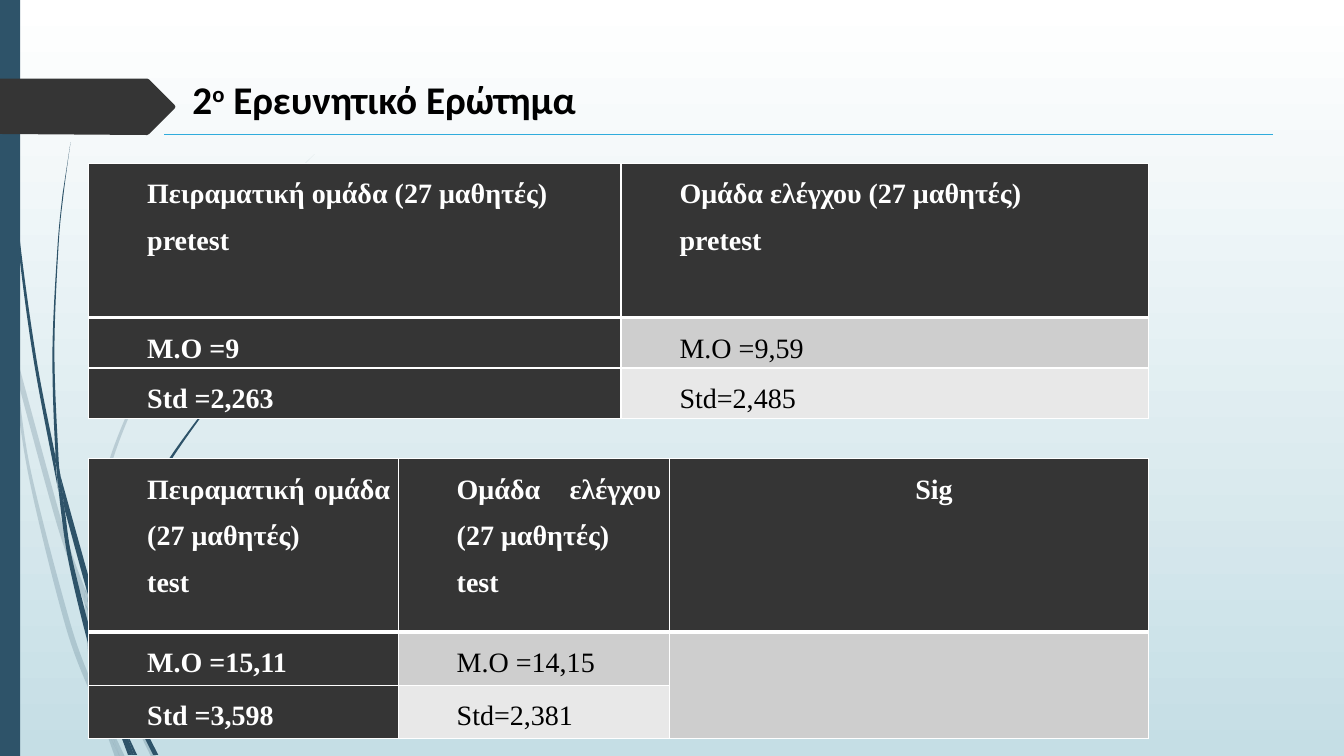
from lxml import etree
from pptx import Presentation
from pptx.dml import color
from pptx.enum import shapes, text
from pptx.oxml import ns
from pptx.util import Inches, Pt

COLORS = {"navy": "2E5369", "dark": "353535", "mid": "CECECE", "pale": "E8E8E8",
          "white": "FFFFFF", "black": "000000", "sky": "C5DEE5", "rule": "2FACDC"}
FAINT_WISPS = [
    ([(0.11, 3.5), (0.08, 3.22), (0, 2.82)], [(0, 2.99), (0.1, 3.44), (0.11, 3.5)]),
    ([(0.14, 3.45), (0.62, 5.2), (0.85, 5.86)],
     [(0.84, 5.99), (0.57, 5.22), (0.17, 3.76)]),
    ([(0.88, 5.96), (0.92, 6.07), (1.27, 6.92), (1.55, 7.51)],
     [(1.5, 7.51), (1.23, 6.94), (0.88, 6.1)]),
    ([(1.05, 7.11), (1.24, 7.51)], [(1.19, 7.51), (1.05, 7.11)]),
    ([(0.11, 3.5), (0.17, 3.76), (0.31, 4.69), (0.7, 6.19), (0.93, 6.83),
      (0.99, 7.07), (1.01, 7.14)],
     [(0.92, 6.93), (0.65, 6.21), (0.28, 4.7), (0.11, 3.5)]),
    ([(0.84, 5.99), (0.88, 6.08), (0.91, 6.46), (1.04, 7.06), (1.05, 7.11)],
     [(0.96, 6.92), (0.93, 6.83), (0.87, 6.46), (0.84, 5.99)]),
    ([(0.88, 5.96), (0.88, 5.84), (1.1, 4.62), (1.6, 3.49), (2.29, 2.45),
      (2.68, 1.98), (2.9, 1.75), (3.12, 1.53)],
     [(2.89, 1.75), (2.68, 1.97), (2.28, 2.44), (1.58, 3.48), (1.07, 4.61),
      (0.85, 5.84), (0.85, 5.86)]),
    ([(1.01, 7.14), (1.14, 7.51)], [(1.19, 7.51), (1.01, 7.14)]),
    ([(0.85, 5.86), (0.88, 5.96), (0.88, 6.1)], [(0.88, 6.08), (0.84, 5.99)]),
    ([(0.93, 6.83), (0.96, 6.92), (1.05, 7.11), (1.19, 7.51)],
     [(1.01, 7.14), (0.99, 7.07), (0.93, 6.83)]),
]
DARK_WISPS = [
    ([(0.03, 0), (0.03, 0.48), (0.07, 1.1), (0.17, 2.33), (0.33, 3.55),
      (0.56, 4.77), (0.57, 4.81)],
     [(0.55, 4.57), (0.55, 4.53), (0.36, 3.55), (0.19, 2.32), (0.08, 1.09),
      (0.05, 0.48), (0.03, 0)]),
    ([(0.6, 4.72), (0.93, 5.9), (1.06, 6.31), (1.06, 6.45)],
     [(1.06, 6.45), (0.88, 5.92), (0.64, 5.05)]),
    ([(1.1, 6.41), (1.13, 6.49), (1.36, 7.06), (1.57, 7.49)],
     [(1.52, 7.49), (1.32, 7.08), (1.11, 6.56)]),
    ([(0.57, 4.77), (0.64, 5.05), (0.72, 5.56), (0.98, 6.57), (1.1, 6.91),
      (1.16, 7.17), (1.17, 7.22)],
     [(1.11, 7.08), (0.93, 6.59), (0.68, 5.57), (0.57, 4.77)]),
    ([(0.6, 4.72), (0.58, 4.53), (0.54, 3.49), (0.58, 2.45), (0.63, 1.93), (0.7, 1.41)],
     [(0.62, 1.93), (0.57, 2.45), (0.52, 3.49), (0.55, 4.49), (0.6, 4.72)]),
    ([(1.22, 7.19), (1.36, 7.49)], [(1.33, 7.49), (1.22, 7.19)]),
    ([(0.55, 4.49), (0.6, 4.72), (0.64, 5.05)], [(0.57, 4.77), (0.55, 4.53)]),
    ([(1.1, 6.41), (1.11, 6.33), (1.25, 5.52), (1.58, 4.76), (2.05, 4.06),
      (2.31, 3.74), (2.61, 3.44)],
     [(2.6, 3.44), (2.31, 3.73), (2.04, 4.05), (1.56, 4.74), (1.22, 5.51), (1.06, 6.31)]),
    ([(1.17, 7.22), (1.27, 7.49)], [(1.31, 7.49), (1.17, 7.22)]),
    ([(1.06, 6.45), (1.11, 6.56), (1.2, 7.16), (1.22, 7.19)],
     [(1.16, 7.06), (1.1, 6.92), (1.06, 6.45)]),
    ([(1.06, 6.31), (1.1, 6.41), (1.11, 6.56)], [(1.06, 6.45), (1.06, 6.31)]),
    ([(1.1, 6.91), (1.16, 7.06), (1.22, 7.19), (1.33, 7.49)],
     [(1.31, 7.49), (1.17, 7.22), (1.1, 6.91)]),
]
ARROW = [(-0.01, 0.78), (1.46, 0.78), (1.48, 0.79), (1.73, 1.04), (1.74, 1.06),
         (1.73, 1.08), (1.48, 1.33), (1.46, 1.34), (-0.01, 1.33)]
TREATED, CONTROL = "Πειραματική ομάδα (27 μαθητές)", "Ομάδα ελέγχου (27 μαθητές)"
PRETEST = [[[TREATED, "pretest"], [CONTROL, "pretest"]],
           [["Μ.Ο =9"], ["Μ.Ο =9,59"]],
           [["Std =2,263"], ["Std=2,485"]]]
TEST = [[[TREATED, "test"], [CONTROL, "test"], ["Sig"]],
        [["Μ.Ο =15,11"], ["Μ.Ο =14,15"], []],
        [["Std =3,598"], ["Std=2,381"], []]]


def rgb(name):
    return color.RGBColor.from_string(COLORS[name])


def apply(target, values):
    for name, value in values.items():
        setattr(target, name, value)


def add_span(para, words, size, font, tone, bold):
    span = para.add_run()
    span.text = words
    apply(span.font, {"size": Pt(size), "name": font, "bold": bold})
    span.font.color.rgb = rgb(tone)
    return span


def paint(shape, tone, opacity=100):
    shape.shadow.inherit = False
    shape.fill.solid()
    shape.fill.fore_color.rgb = rgb(tone)
    shape.line.fill.background()
    if opacity < 100:
        tint = shape.fill._xPr.find(".//" + ns.qn("a:srgbClr"))
        etree.SubElement(tint, ns.qn("a:alpha"), val=str(opacity * 1000))


def add_outline(page, points, tone, opacity=100):
    corners = [(Inches(x), Inches(y)) for x, y in points]
    builder = page.shapes.build_freeform(*corners[0], scale=1.0)
    builder.add_line_segments(corners[1:], close=True)
    shape = builder.convert_to_shape()
    paint(shape, tone, opacity)
    return shape


def bend(segments):
    """Turn a run of straight segments into one flowing curve."""
    ends = [segment[0] for segment in segments]
    points = [(int(end.get("x")), int(end.get("y"))) for end in ends]
    padded = [points[0], *points, points[-1]]
    for segment, a, b, c, d in zip(segments[1:], padded, padded[1:], padded[2:], padded[3:]):
        segment.tag = ns.qn("a:cubicBezTo")
        leave = [q + (r - p) // 6 for p, q, r in zip(a, b, c)]
        arrive = [q - (r - p) // 6 for p, q, r in zip(b, c, d)]
        for place, (x, y) in enumerate((leave, arrive)):
            segment.insert(place, etree.Element(ns.qn("a:pt"), x=str(x), y=str(y)))


def add_wisp(page, outward, back, opacity):
    shape = add_outline(page, outward + back, "navy", opacity)
    start = shape._element.find(".//" + ns.qn("a:moveTo"))
    segments = [start, *shape._element.iter(ns.qn("a:lnTo"))]
    half = len(outward)
    bend(segments[half:half + len(back)])
    bend(segments[:half])


def add_title(page):
    box = page.shapes.add_textbox(Inches(1.81), Inches(0.7), Inches(7.65), Inches(0.57))
    apply(box.text_frame, {"word_wrap": True,
                           "auto_size": text.MSO_AUTO_SIZE.SHAPE_TO_FIT_TEXT})
    para = box.text_frame.paragraphs[0]
    for words, baseline in [("2", 0), ("ο", 30000), (" Ερευνητικό Ερώτημα", 0)]:
        span = add_span(para, words, 28, "Calibri", "black", True)
        span._r.get_or_add_rPr().set("baseline", str(baseline))


def add_rule(page):
    rule = page.shapes.add_connector(shapes.MSO_CONNECTOR.STRAIGHT, Inches(1.63),
                                     Inches(1.33), Inches(12.63), Inches(1.33))
    rule.line.color.rgb = rgb("rule")
    rule.line.width = Pt(0.75)
    etree.SubElement(rule._element.spPr, ns.qn("a:effectLst"))
    rule._element.remove(rule._element.find(ns.qn("p:style")))


def add_borders(cell, row):
    widths = {"L": 1, "R": 1, "T": 3 if row == 1 else 1, "B": 3 if row == 0 else 1}
    for side, width in widths.items():
        edge = etree.SubElement(cell._tc.get_or_add_tcPr(), ns.qn("a:ln" + side),
                                w=str(Pt(width)))
        fill = etree.SubElement(edge, ns.qn("a:solidFill"))
        etree.SubElement(fill, ns.qn("a:srgbClr"), val=COLORS["white"])


def fill_cell(cell, lines, row, column, last):
    add_borders(cell, row)
    heading = row == 0 or column == 0
    cell.fill.solid()
    cell.fill.fore_color.rgb = rgb("dark" if heading else ("mid", "pale")[row - 1])
    apply(cell, {"margin_left": Inches(0.08), "margin_right": Inches(0.08),
                 "margin_top": 0, "margin_bottom": 0})
    frame = cell.text_frame
    align = text.PP_ALIGN.CENTER if lines == ["Sig"] else text.PP_ALIGN.JUSTIFY
    for index, words in enumerate(lines):
        para = frame.paragraphs[0] if index == 0 else frame.add_paragraph()
        apply(para, {"alignment": align, "line_spacing": 1.5})
        apply(para, {"space_after": Pt(8 if last and index == len(lines) - 1 else 0)})
        para._p.get_or_add_pPr().set("marL", str(Inches(0.5)))
        add_span(para, words, 20, "Times New Roman",
                 "white" if heading else "black", heading)


def add_results(page, top, widths, heights, rows):
    table = page.shapes.add_table(len(rows), len(widths), Inches(0.88), Inches(top),
                                  Inches(sum(widths)), Inches(sum(heights))).table
    apply(table, {"first_row": False, "horz_banding": False})
    for column, width in zip(table.columns, widths):
        column.width = Inches(width)
    for r, (height, cells) in enumerate(zip(heights, rows)):
        table.rows[r].height = Inches(height)
        for c, lines in enumerate(cells):
            fill_cell(table.cell(r, c), lines, r, c, c == len(widths) - 1)
    return table


def main():
    deck = Presentation()
    apply(deck, {"slide_width": Inches(13.33), "slide_height": Inches(7.5)})
    page = deck.slides.add_slide(deck.slide_layouts[6])
    backdrop = page.background.fill
    backdrop.gradient()
    backdrop.gradient_angle = 270
    for stop, tone in zip(backdrop.gradient_stops, ("white", "sky")):
        stop.color.rgb = rgb(tone)
    for wisps, opacity in [(FAINT_WISPS, 20), (DARK_WISPS, 100)]:
        for outward, back in wisps:
            add_wisp(page, outward, back, opacity)
    bar = page.shapes.add_shape(shapes.MSO_SHAPE.RECTANGLE, 0, 0, Inches(0.2), Inches(7.5))
    paint(bar, "navy")
    add_outline(page, ARROW, "dark")
    add_title(page)
    add_rule(page)
    add_results(page, 1.62, [5.28, 5.23], [1.53, 0.47, 0.47], PRETEST)
    test = add_results(page, 4.55, [3.07, 2.69, 4.75], [1.72, 0.53, 0.53], TEST)
    test.cell(1, 2).merge(test.cell(2, 2))
    deck.save("out.pptx")


if __name__ == "__main__":
    main()
